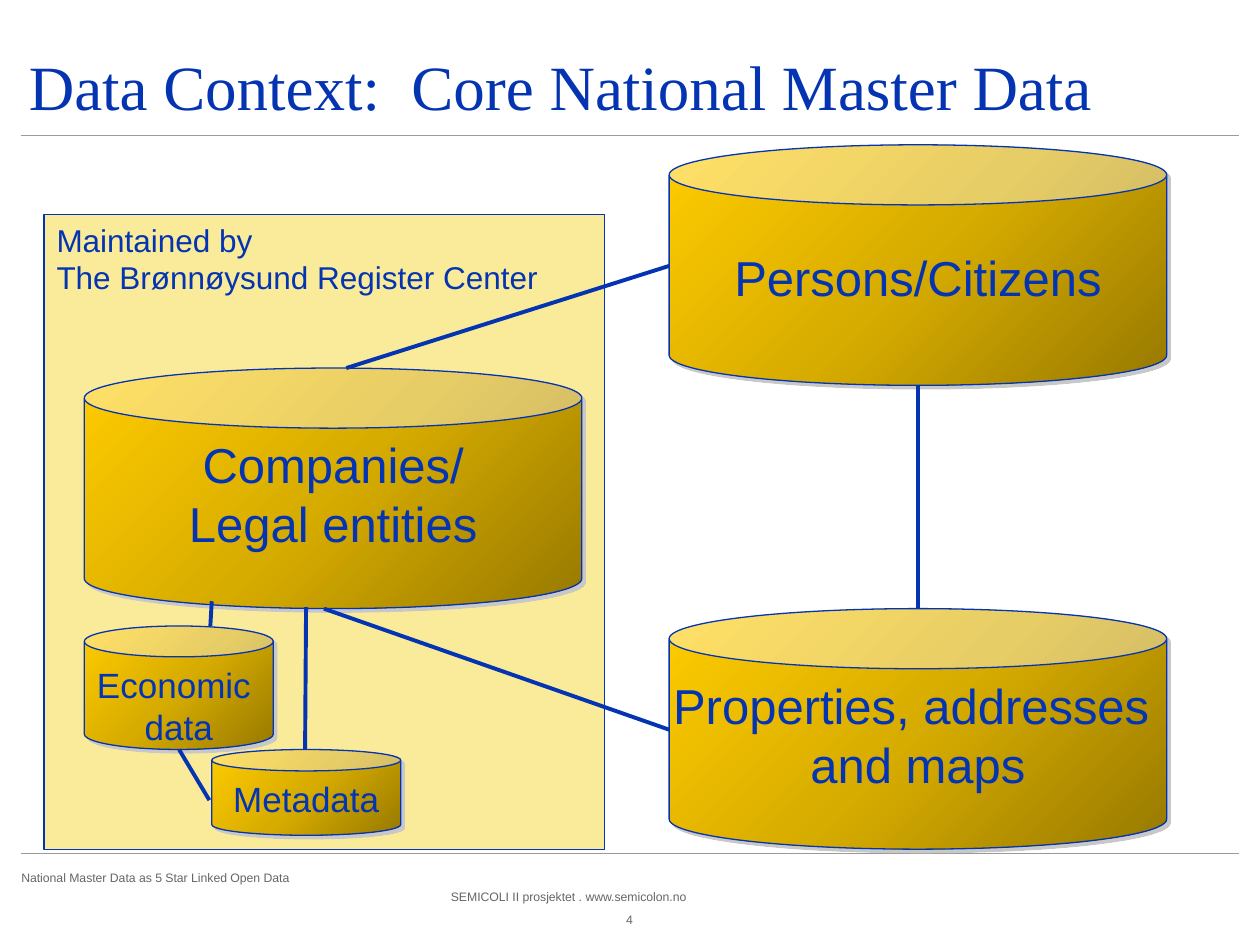
from dataclasses import dataclass

from pptx import Presentation
from pptx import util as u
from pptx.dml.color import RGBColor
from pptx.enum import shapes, text
from pptx.oxml import parse_xml
from pptx.oxml.ns import nsdecls, qn


@dataclass
class Theme:
    blue: str = "0434B1"
    grey: str = "666666"
    rule: str = "99999E"
    panel: str = "F9EB99"
    gold: tuple = ((0, "977900"), (50, "D7AC00"), (100, "FFCC00"))
    shadow: str = "C8C8C8"
    title_font: str = "Times New Roman"
    body_font: str = "Arial"
    title_size: int = 36
    large_size: int = 28
    small_size: int = 20
    panel_size: int = 18
    footer_size: int = 7
    outline: float = 0.75
    link: float = 2.25
    hairline: float = 0.5


theme = Theme()


def write(frame, lines, size, font=theme.body_font, color=theme.blue,
          align=text.PP_ALIGN.LEFT, anchor=text.MSO_ANCHOR.TOP,
          wrap=False, margins=(0.25, 0.13, 0.25, 0.13)):
    """Fill a text frame, one paragraph per line; margins are in cm."""
    frame.auto_size = text.MSO_AUTO_SIZE.NONE
    frame.word_wrap = wrap
    frame.vertical_anchor = anchor
    (frame.margin_left, frame.margin_top,
     frame.margin_right, frame.margin_bottom) = map(u.Cm, margins)
    for number, line in enumerate(lines):
        para = frame.paragraphs[0] if number == 0 else frame.add_paragraph()
        para.alignment = align
        span = para.add_run()
        span.text = line
        span.font.name = font
        span.font.size = u.Pt(size)
        span.font.color.rgb = RGBColor.from_string(color)


def draw_line(page, start, end, color, width):
    line = page.shapes.add_connector(
        shapes.MSO_CONNECTOR.STRAIGHT, *map(u.Cm, (*start, *end)))
    line.line.color.rgb = RGBColor.from_string(color)
    line.line.width = u.Pt(width)
    line._element.spPr.append(parse_xml(f"<a:effectLst {nsdecls('a')}/>"))


deck = Presentation()
deck.slide_width, deck.slide_height = u.Cm(25.4), u.Cm(19.05)
page = deck.slides.add_slide(deck.slide_layouts[5])

# Title
title = page.shapes.title
title.left, title.top, title.width, title.height = map(
    u.Cm, (0.43, 0.41, 24.56, 2.08))
write(title.text_frame, ["Data Context:  Core National Master Data"],
      theme.title_size, font=theme.title_font, wrap=True,
      anchor=text.MSO_ANCHOR.BOTTOM, margins=(0.15, 0, 0.15, 0))

# Rules and footer
for y in (2.74, 17.2):
    draw_line(page, (0.43, y), (24.97, y), theme.rule, theme.hairline)

footers = [
    ("National Master Data as 5 Star Linked Open Data",
     0.43, 17.55, 9, text.PP_ALIGN.LEFT),
    ("SEMICOLI II prosjektet . www.semicolon.no",
     9.09, 17.93, 9, text.PP_ALIGN.LEFT),
    ("4", 12.19, 18.39, 1, text.PP_ALIGN.CENTER),
]
for words, left, top, width, align in footers:
    box = page.shapes.add_textbox(*map(u.Cm, (left, top, width, 0.3)))
    write(box.text_frame, [words], theme.footer_size, color=theme.grey,
          align=align, anchor=text.MSO_ANCHOR.MIDDLE, wrap=True,
          margins=(0, 0, 0, 0))

# Panel of registers kept by one body
panel = page.shapes.add_shape(
    shapes.MSO_SHAPE.RECTANGLE, *map(u.Cm, (0.89, 4.32, 11.3, 12.8)))
panel.shadow.inherit = False
panel.fill.solid()
panel.fill.fore_color.rgb = RGBColor.from_string(theme.panel)
panel.line.color.rgb = RGBColor.from_string(theme.blue)
panel.line.width = u.Pt(theme.outline)
write(panel.text_frame, ["Maintained by", "The Brønnøysund Register Center"],
      theme.panel_size)

# Data stores: lines, left, top, width, height, text size, top margin
large, small = (10.03, 4.85), 3.81
left_edge, right_edge = 1.7, 13.49
stores = [
    (["Economic ", "data"], left_edge, 12.62, small, 2.49, theme.small_size, 0.13),
    (["Metadata"], 4.27, 15.11, small, 1.73, theme.small_size, 0.13),
    (["Persons/Citizens"], right_edge, 2.92, *large, theme.large_size, 0.86),
    (["Companies/", "Legal entities"], left_edge, 7.42, *large,
     theme.large_size, 0.13),
    (["Properties, addresses ", "and maps"], right_edge, 12.27, *large,
     theme.large_size, 0.13),
]
stops = "".join(
    f'<a:gs pos="{place * 1000}"><a:srgbClr val="{color}"/></a:gs>'
    for place, color in theme.gold)
gradient = (
    f"<a:gradFill {nsdecls('a')} rotWithShape=\"1\"><a:gsLst>{stops}</a:gsLst>"
    '<a:path path="circle"><a:fillToRect l="100000" t="100000"/></a:path>'
    "</a:gradFill>")
shadow = (
    f"<a:outerShdw {nsdecls('a')} dist=\"{u.Pt(2.8)}\" dir=\"2700000\" "
    'algn="ctr" rotWithShape="0">'
    f'<a:srgbClr val="{theme.shadow}"/></a:outerShdw>')
for lines, left, top, width, height, size, margin_top in stores:
    store = page.shapes.add_shape(
        shapes.MSO_SHAPE.CAN, *map(u.Cm, (left, top, width, height)))
    store.fill.solid()
    store.line.color.rgb = RGBColor.from_string(theme.blue)
    store.line.width = u.Pt(theme.outline)
    store.shadow.inherit = False
    properties = store._element.spPr
    properties.replace(properties.find(qn("a:solidFill")), parse_xml(gradient))
    properties.find(qn("a:effectLst")).append(parse_xml(shadow))
    write(store.text_frame, lines, size, align=text.PP_ALIGN.CENTER,
          margins=(0.25, margin_top, 0.25, 0.13))

# Links between the stores
links = [
    ((4.24, 12.62), (4.27, 12.12)),
    ((6.15, 15.11), (6.17, 12.24)),
    ((4.22, 16.13), (3.61, 15.11)),
    ((18.5, 7.77), (18.5, 12.27)),
    ((6.98, 7.42), (13.49, 5.36)),
    ((6.53, 12.27), (13.49, 14.71)),
]
for start, end in links:
    draw_line(page, start, end, theme.blue, theme.link)

deck.save("out.pptx")
